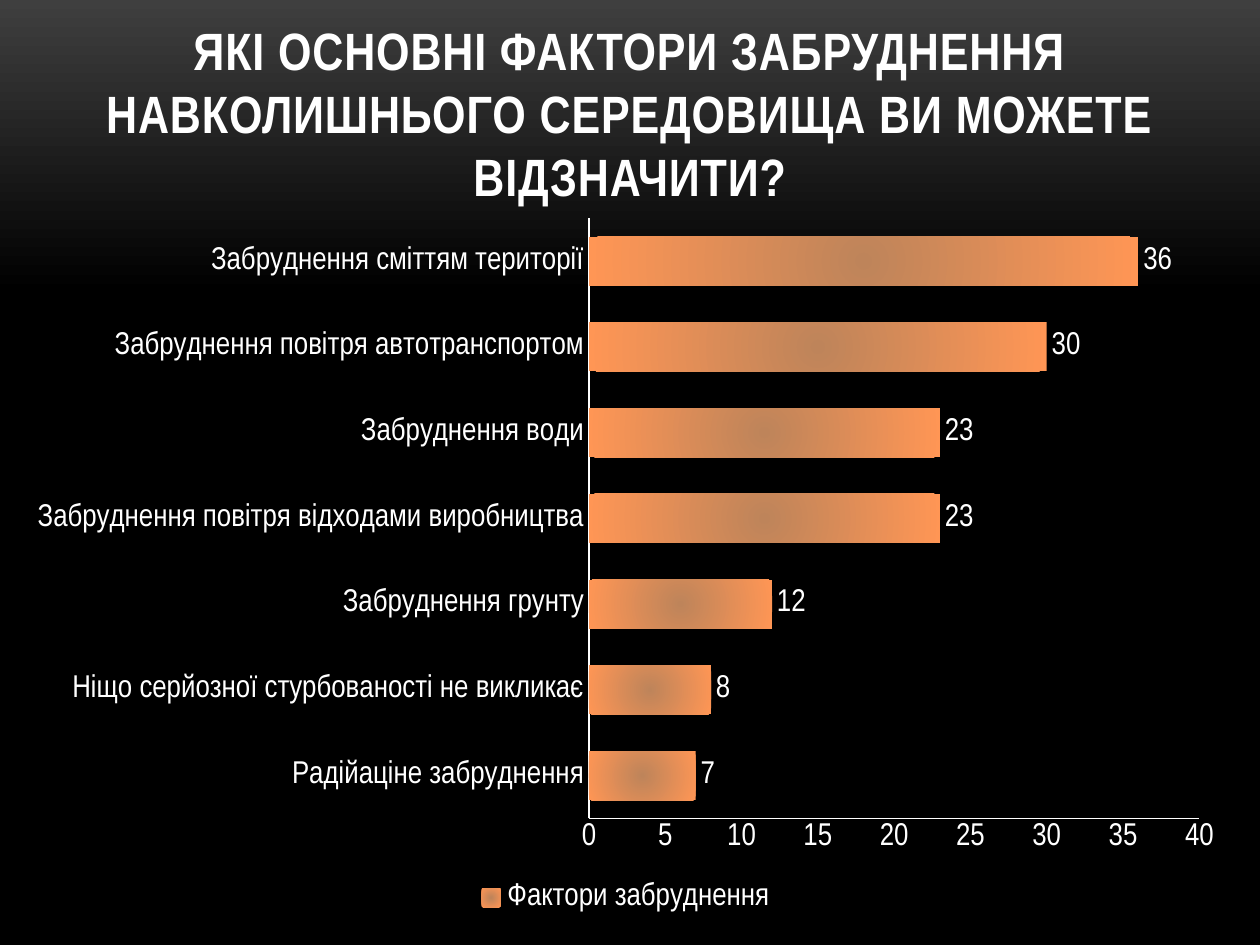
"""Build a slide with a bar chart of environmental pollution factors."""
from dataclasses import dataclass

from pptx import Presentation
from pptx import util as u
from pptx.chart.data import CategoryChartData
from pptx.dml.color import RGBColor
from pptx.enum import chart as ch, text
from pptx.oxml import parse_xml
from pptx.oxml.ns import nsdecls


@dataclass(frozen=True)
class Theme:
    font: str = "Arial Narrow"
    ink: str = "FFFFFF"
    back_top: str = "3F3F3F"
    back: str = "000000"
    bar_edge: str = "FF9655"
    bar_center: str = "BE845A"
    title_size: int = 30
    chart_size: int = 18


@dataclass(frozen=True)
class Factor:
    name: str
    votes: int


THEME = Theme()
TITLE = "ЯКІ ОСНОВНІ ФАКТОРИ ЗАБРУДНЕННЯ НАВКОЛИШНЬОГО СЕРЕДОВИЩА ВИ МОЖЕТЕ ВІДЗНАЧИТИ?"
FACTORS = [
    Factor("Радійаціне забруднення", 7),
    Factor("Ніщо серйозної стурбованості не викликає", 8),
    Factor("Забруднення грунту", 12),
    Factor("Забруднення повітря відходами виробництва", 23),
    Factor("Забруднення води", 23),
    Factor("Забруднення повітря автотранспортом", 30),
    Factor("Забруднення сміттям території", 36),
]


def rgb(value: str) -> RGBColor:
    return RGBColor.from_string(value)


def paint_background(s) -> None:
    fill = s.background.fill
    fill.gradient()
    fill.gradient_angle = 270
    stops = [(0, THEME.back_top), (0.31, THEME.back)]
    for stop, (position, color) in zip(fill.gradient_stops, stops):
        stop.position = position
        stop.color.rgb = rgb(color)


def add_text(s, content: str, left: float, top: float, width: float, height: float, *,
             size: int, bold: bool = False, spacing: float = 0) -> None:
    tf = s.shapes.add_textbox(u.Inches(left), u.Inches(top),
                              u.Inches(width), u.Inches(height)).text_frame
    tf.word_wrap = True
    tf.vertical_anchor = text.MSO_ANCHOR.BOTTOM
    p = tf.paragraphs[0]
    p.alignment = text.PP_ALIGN.CENTER
    r = p.add_run()
    r.text = content
    r.font.name, r.font.size, r.font.bold = THEME.font, u.Pt(size), bold
    r.font.color.rgb = rgb(THEME.ink)
    r.font._element.set("spc", str(int(spacing * 100)))


def radial_fill(center: str, edge: str):
    return parse_xml(
        f'<a:gradFill {nsdecls("a")} rotWithShape="1"><a:gsLst>'
        f'<a:gs pos="0"><a:srgbClr val="{center}"/></a:gs>'
        f'<a:gs pos="100000"><a:srgbClr val="{edge}"/></a:gs></a:gsLst>'
        '<a:path path="circle"><a:fillToRect l="50000" t="50000" r="50000" b="50000"/>'
        '</a:path></a:gradFill>')


def place_plot(chart, x: float, y: float, w: float, h: float) -> None:
    plot_area = chart._chartSpace.chart.plotArea
    for old in plot_area.findall("{*}layout"):
        plot_area.remove(old)
    sizes = "".join(f'<c:{k} val="{v}"/>' for k, v in zip("xywh", (x, y, w, h)))
    plot_area.insert(0, parse_xml(
        f'<c:layout {nsdecls("c")}><c:manualLayout><c:layoutTarget val="inner"/>'
        f'<c:xMode val="edge"/><c:yMode val="edge"/>{sizes}</c:manualLayout></c:layout>'))


def add_factor_chart(s, factors: list[Factor]) -> None:
    data = CategoryChartData()
    data.categories = [f.name for f in factors]
    data.add_series("Фактори забруднення", [f.votes for f in factors])
    chart = s.shapes.add_chart(ch.XL_CHART_TYPE.BAR_CLUSTERED, u.Inches(0.12), u.Inches(1.62),
                               u.Inches(9.69), u.Inches(5.67), data).chart
    chart.has_title = False
    chart.font.name, chart.font.size = THEME.font, u.Pt(THEME.chart_size)
    chart.font.color.rgb = rgb(THEME.ink)
    chart.has_legend = True
    chart.legend.position = ch.XL_LEGEND_POSITION.BOTTOM
    chart.legend.include_in_layout = False
    for axis in (chart.category_axis, chart.value_axis):
        axis.has_major_gridlines = False
        axis.major_tick_mark = axis.minor_tick_mark = ch.XL_TICK_MARK.NONE
        axis.format.line.color.rgb = rgb(THEME.ink)
        axis.format.line.width = u.Pt(1)
    chart.value_axis.minimum_scale = 0
    chart.value_axis.maximum_scale = 40
    chart.value_axis.major_unit = 5
    plot = chart.plots[0]
    plot.gap_width = 75
    plot.vary_by_categories = False
    series = plot.series[0]
    series._element.get_or_add_spPr().insert(0, radial_fill(THEME.bar_center, THEME.bar_edge))
    series.data_labels.show_value = True
    series.data_labels.position = ch.XL_LABEL_POSITION.OUTSIDE_END
    place_plot(chart, 0.47, 0.02, 0.5, 0.84)


def main() -> None:
    prs = Presentation()
    prs.slide_width, prs.slide_height = u.Inches(10), u.Inches(7.5)
    s = prs.slides.add_slide(prs.slide_layouts[6])
    paint_background(s)
    add_text(s, TITLE, 0, 0, 10, 1.69, size=THEME.title_size, bold=True, spacing=0.5)
    add_factor_chart(s, FACTORS)
    prs.save("out.pptx")


if __name__ == "__main__":
    main()
